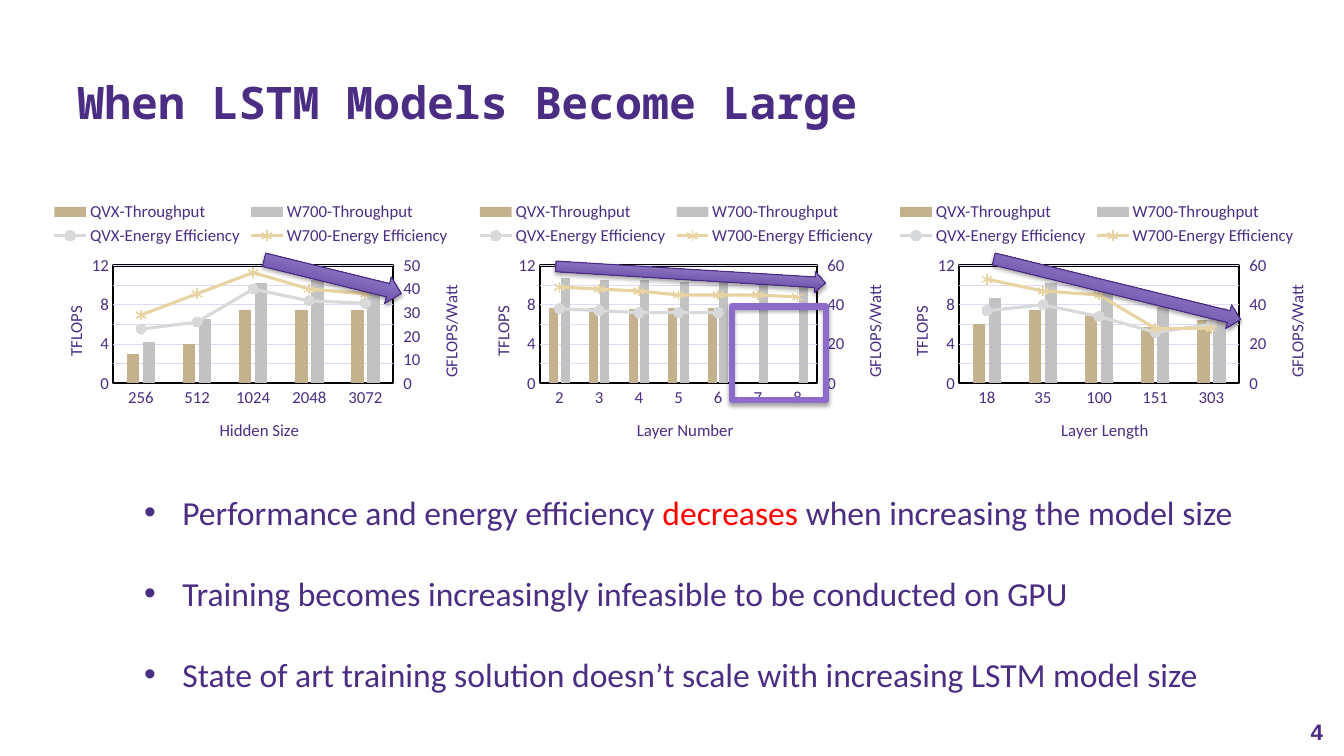
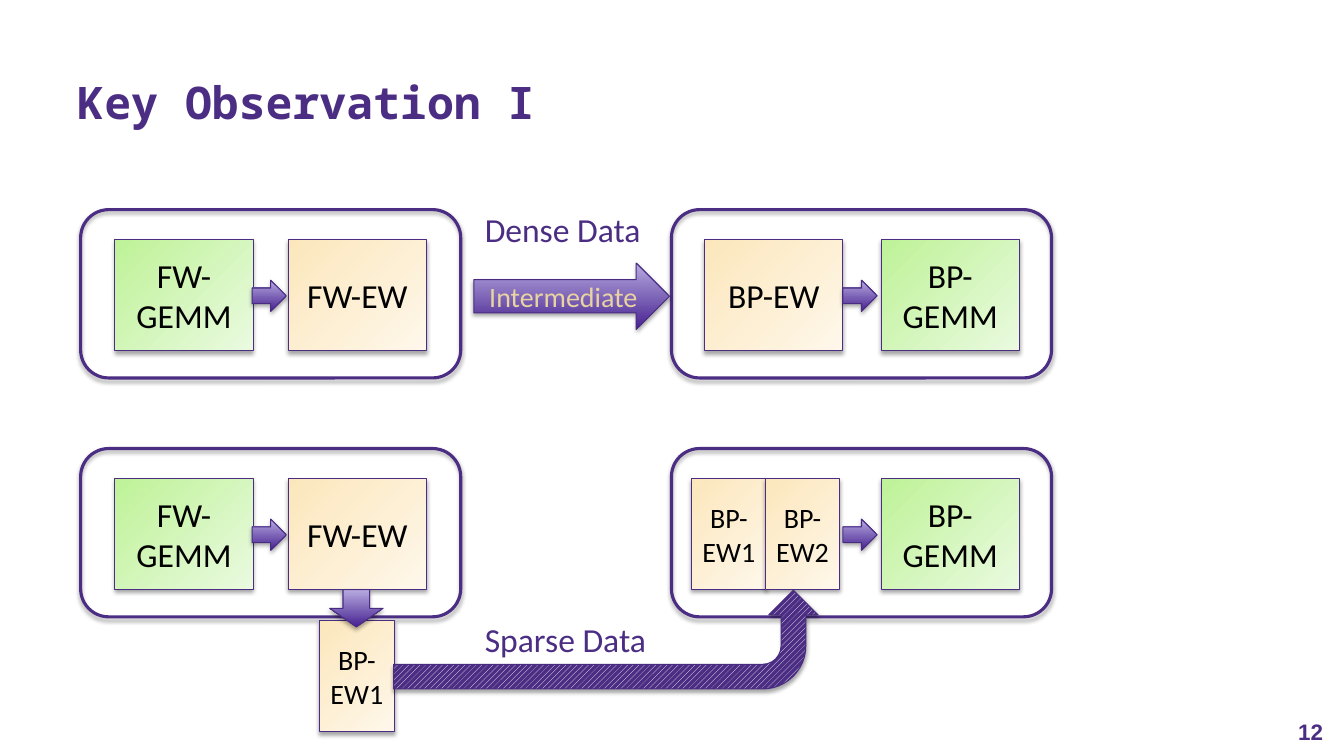
from copy import deepcopy

from lxml.etree import SubElement
from pptx import Presentation
from pptx.chart.axis import ValueAxis
from pptx.chart.data import CategoryChartData
from pptx.dml.color import RGBColor
from pptx.enum.chart import XL_CHART_TYPE as ChartType
from pptx.enum.chart import XL_LEGEND_POSITION as LegendPosition
from pptx.enum.chart import XL_MARKER_STYLE as Marker
from pptx.enum.chart import XL_TICK_MARK as Tick
from pptx.enum.dml import MSO_PATTERN as Pattern
from pptx.enum.shapes import MSO_SHAPE as Shape
from pptx.enum.text import MSO_ANCHOR as Anchor
from pptx.enum.text import PP_ALIGN as Align
from pptx.oxml import parse_xml
from pptx.oxml.ns import nsdecls, qn
from pptx.util import Inches, Pt

PURPLE, EDGE, LILAC, GOLD = "4B2E83", "492B82", "8C6BCB", "E8D3A2"
ARROW_FILL = ("472190", "B7ABE0", 90)
GREEN_FILL = ("BEF297", "EAFAE0", 315)
CREAM_FILL = ("FCE7BC", "FEF7EA", 315)
TITLE = {"name": "Noto Sans Mono", "size": 32, "bold": True, "color": PURPLE}
NUMBER = {"name": "Arial", "size": 16, "bold": True, "color": PURPLE}
BODY = {"name": "Calibri", "size": 24, "bold": False, "color": PURPLE}
CHART_TEXT = BODY | {"size": 12}
BARS = [("QVX-Throughput", "C3B28D"), ("W700-Throughput", "C2C2C2")]
LINES = [("QVX-Energy Efficiency", "D8D9DA", Marker.CIRCLE),
         ("W700-Energy Efficiency", GOLD, Marker.STAR)]
CHARTS = [
    {"box": (0.35, 1.89, 4.28, 2.66), "title": "Hidden Size", "title_x": 0.42, "right_max": 50,
     "categories": ["256", "512", "1024", "2048", "3072"],
     "values": [[3, 4, 7.5, 7.5, 7.5], [4.2, 6.6, 10.2, 10.5, 10.5],
                [23, 26, 40, 35, 34], [29, 38, 47, 40, 38]]},
    {"box": (4.59, 1.89, 4.24, 2.66), "title": "Layer Number", "title_x": 0.4, "right_max": 60,
     "categories": ["2", "3", "4", "5", "6", "7", "8"],
     "values": [[7.7, 7.7, 7.6, 7.7, 7.7, None, None],
                [10.7, 10.5, 10.5, 10.3, 10.3, 10.4, 10.4],
                [38, 37, 36, 36, 36, None, None], [49, 48, 47, 45, 45, 45, 44]]},
    {"box": (8.74, 1.89, 4.28, 2.66), "title": "Layer Length", "title_x": 0.41, "right_max": 60,
     "categories": ["18", "35", "100", "151", "303"],
     "values": [[6, 7.5, 7, 5.7, 6.5], [8.7, 10.2, 9.4, 7.8, 7.7],
                [37, 40, 34, 26, 30], [53, 47, 45, 28, 28]]},
]
TREND_ARROWS = [((2.6, 2.61, 1.4, 0.27), 13.8), ((5.51, 2.62, 2.68, 0.21), 3.5),
                ((9.82, 2.75, 2.52, 0.24), 13.8)]
BULLETS = [
    [("Performance and energy efficiency ", PURPLE), ("decreases ", "FF0000"),
     ("when increasing the model size", PURPLE)],
    [("Training becomes increasingly infeasible to be conducted on GPU", PURPLE)],
    [("State of art training solution doesn’t scale with increasing LSTM model size", PURPLE)],
]
FORWARD = [("FW-GEMM", 0.34, 1.37, GREEN_FILL), ("FW-EW", 2.06, 1.37, CREAM_FILL)]
BACKWARD = [("BP-EW", 0.33, 1.37, CREAM_FILL), ("BP-GEMM", 2.08, 1.37, GREEN_FILL)]
SPLIT_BACKWARD = [("BP-EW1", 0.2, 0.74, CREAM_FILL), ("BP-EW2", 0.93, 0.74, CREAM_FILL),
                  ("BP-GEMM", 2.08, 1.37, GREEN_FILL)]


def rgb(value):
    """Turn a hex string into a colour."""
    return RGBColor.from_string(value)


def style(font, values):
    """Apply a dict of format values to a font."""
    for key, value in values.items():
        if key == "color":
            font.color.rgb = rgb(value)
        else:
            setattr(font, key, Pt(value) if key == "size" else value)


def add_span(para, text, values):
    """Append one formatted run to a paragraph."""
    span = para.add_run()
    span.text = text
    style(span.font, values)


def add_text(page, box, text, values, align=Align.LEFT, anchor=Anchor.TOP, wrap=True):
    """Place a single-paragraph text box."""
    frame = page.shapes.add_textbox(*map(Inches, box)).text_frame
    frame.word_wrap, frame.vertical_anchor = wrap, anchor
    frame.paragraphs[0].alignment = align
    add_span(frame.paragraphs[0], text, values)


def set_line(line, color, width):
    """Give a line its colour and width."""
    line.color.rgb, line.width = rgb(color), Pt(width)


def add_block(page, kind, box, fill=None, line=(EDGE, 0.75), text="", values=BODY, turn=0):
    """Place a softly shadowed shape with an optional gradient and label."""
    shape = page.shapes.add_shape(kind, *map(Inches, box))
    shape.rotation = turn
    set_line(shape.line, *line)
    if fill:
        first, last, angle = fill
        shape.fill.gradient()
        shape.fill.gradient_angle = angle
        for stop, color in zip(shape.fill.gradient_stops, (first, last)):
            stop.color.rgb = rgb(color)
    else:
        shape.fill.background()
    shape.shadow.inherit = False
    effects = shape._element.spPr.find(qn("a:effectLst"))
    shadow = SubElement(effects, qn("a:outerShdw"), blurRad=str(Pt(3.1)), dist=str(Pt(1.8)),
                        dir="5400000", algn="t", rotWithShape="0")
    tint = SubElement(shadow, qn("a:srgbClr"), val="000000")
    SubElement(tint, qn("a:alpha"), val="35000")
    if text:
        shape.text_frame.word_wrap = True
        shape.text_frame.vertical_anchor = Anchor.MIDDLE
        para = shape.text_frame.paragraphs[0]
        para.alignment = Align.CENTER
        add_span(para, text, values)
    return shape


def new_page(deck, title, number):
    """Add a blank page with the shared title and page number."""
    page = deck.slides.add_slide(deck.slide_layouts[6])
    add_text(page, (0.67, 0.55, 11.93, 0.77), title, TITLE, anchor=Anchor.BOTTOM)
    add_text(page, (10.11, 7.08, 3.11, 0.52), number, NUMBER, align=Align.RIGHT)
    return page


def set_layout(parent, **places):
    """Fix the place of a chart part as fractions of the chart."""
    layout = parent.find(qn("c:layout"))
    if layout is None:
        layout = parse_xml(f"<c:layout {nsdecls('c')}/>")
        parent.insert(0, layout)
    manual = SubElement(layout, qn("c:manualLayout"))
    if "w" in places:
        SubElement(manual, qn("c:layoutTarget"), val="inner")
    for mode in ("xMode", "yMode"):
        SubElement(manual, qn(f"c:{mode}"), val="edge")
    for key, value in places.items():
        SubElement(manual, qn(f"c:{key}"), val=str(value))


def name_axis(axis, text, x, y, upright=False):
    """Title an axis at a fixed place."""
    title = axis.axis_title
    add_span(title.text_frame.paragraphs[0], text, CHART_TEXT)
    body = title.text_frame._txBody.bodyPr
    body.set("rot", "-5400000" if upright else "0")
    body.set("vert", "horz")
    set_layout(title._element, x=x, y=y)


def add_right_axis(chart, top):
    """Move the last two series to lines on a second axis and return that axis."""
    bars = chart.plots[0]._element
    left, bottom = chart.value_axis._element, chart.category_axis._element
    lines = parse_xml(f'<c:lineChart {nsdecls("c")}><c:grouping val="standard"/>'
                      '<c:varyColors val="0"/></c:lineChart>')
    for series in bars.findall(qn("c:ser"))[len(BARS):]:
        for flag in series.findall(qn("c:invertIfNegative")):
            series.remove(flag)
        lines.append(series)
    for tag, value in (("marker", "1"), ("axId", "5001"), ("axId", "5002")):
        SubElement(lines, qn(f"c:{tag}"), val=value)
    bars.addnext(lines)
    right, hidden = deepcopy(left), deepcopy(bottom)
    left.addnext(right)
    right.addnext(hidden)
    changes = [(right, {"axId": "5002", "crossAx": "5001", "axPos": "r", "crosses": "max"}),
               (hidden, {"axId": "5001", "crossAx": "5002", "delete": "1"})]
    for element, values in changes:
        for tag, value in values.items():
            element.find(qn(f"c:{tag}")).set("val", value)
    axis = ValueAxis(right)
    axis.has_major_gridlines = False
    axis.maximum_scale, axis.major_unit = top, 10
    axis.major_tick_mark = Tick.OUTSIDE
    return axis


def add_throughput_chart(page, box, title, title_x, right_max, categories, values):
    """Place a chart of throughput bars and energy efficiency lines."""
    data = CategoryChartData()
    data.categories = categories
    for (name, *_), numbers in zip(BARS + LINES, values):
        data.add_series(name, numbers)
    chart = page.shapes.add_chart(ChartType.COLUMN_CLUSTERED, *map(Inches, box), data).chart
    style(chart.font, CHART_TEXT)
    chart.has_title, chart.has_legend = False, True
    chart.legend.position = LegendPosition.TOP
    chart.legend.include_in_layout = False
    style(chart.legend.font, CHART_TEXT)
    columns, bottom, left = chart.plots[0], chart.category_axis, chart.value_axis
    columns.gap_width, columns.overlap, columns.vary_by_categories = 219, -27, False
    for axis in (bottom, left):
        axis.major_tick_mark = Tick.NONE
        style(axis.tick_labels.font, CHART_TEXT)
    set_line(bottom.format.line, "000000", 1.5)
    left.minimum_scale, left.maximum_scale, left.major_unit = 0, 12, 2
    left.format.line.fill.background()
    set_line(left.major_gridlines.format.line, "E2DAF2", 0.75)
    right = add_right_axis(chart, right_max)
    name_axis(bottom, title, title_x, 0.84)
    name_axis(left, "TFLOPS", 0.06, 0.42, True)
    name_axis(right, "GFLOPS/Watt", 0.93, 0.34, True)
    for series, (_, color) in zip(chart.plots[0].series, BARS):
        series.format.fill.solid()
        series.format.fill.fore_color.rgb = rgb(color)
    for series, (_, color, marker) in zip(chart.plots[1].series, LINES):
        series.smooth = False
        set_line(series.format.line, color, 2.25)
        series.marker.style, series.marker.size = marker, 7
        series.marker.format.fill.solid()
        series.marker.format.fill.fore_color.rgb = rgb(color)
        set_line(series.marker.format.line, color, 0.75)
    area = columns._element.getparent()
    set_layout(area, x=0.18, y=0.28, w=0.65, h=0.44)
    area.append(parse_xml(f'<c:spPr {nsdecls("c", "a")}><a:noFill/><a:ln w="{Pt(1.5)}"><a:solidFill>'
                          '<a:srgbClr val="000000"/></a:solidFill></a:ln></c:spPr>'))


def add_bullets(page, box):
    """Place the bulleted findings."""
    frame = page.shapes.add_textbox(*map(Inches, box)).text_frame
    frame.word_wrap = True
    for index, spans in enumerate(BULLETS):
        para = frame.add_paragraph() if index else frame.paragraphs[0]
        properties = para._p.get_or_add_pPr()
        properties.set("marL", str(Inches(0.38)))
        properties.set("indent", str(Inches(-0.38)))
        SubElement(properties, qn("a:buFont"), typeface="Arial")
        SubElement(properties, qn("a:buChar"), char="•")
        if index:
            para.space_before = Pt(29)
        for text, color in spans:
            add_span(para, text, BODY | {"color": color})


def add_operation(page, box, text, fill):
    """Place one operation block, with smaller text when it is narrow."""
    size = 24 if box[2] > 1 else 20
    add_block(page, Shape.RECTANGLE, box, fill, (PURPLE, 0.75), text,
              BODY | {"size": size, "color": "000000"})


def add_stage(page, left, top, operations):
    """Place a rounded frame with its operations and the arrow between them."""
    for text, offset, width, fill in operations:
        add_operation(page, (left + offset, top + 0.3, width, 1.1), text, fill)
    add_block(page, Shape.RIGHT_ARROW, (left + 1.7, top + 0.7, 0.34, 0.31), ARROW_FILL)
    add_block(page, Shape.ROUNDED_RECTANGLE, (left, top, 3.77, 1.67), line=(PURPLE, 2.25))


def add_sparse_path(page, left, top):
    """Place the early operation and the bent arrow that carries sparse data."""
    add_operation(page, (left, top, 0.74, 1.1), "BP-EW1", CREAM_FILL)
    add_block(page, Shape.DOWN_ARROW, (left + 0.1, top - 0.31, 0.53, 0.37), ARROW_FILL)
    bend = add_block(page, Shape.BENT_ARROW, (left + 2.35, top - 1.92, 0.98, 4.21), turn=90)
    bend._element.spPr.find(qn("a:xfrm")).set("flipH", "1")
    bend.fill.patterned()
    bend.fill.pattern = Pattern.WIDE_UPWARD_DIAGONAL
    bend.fill.fore_color.rgb, bend.fill.back_color.rgb = rgb("FFFFFF"), rgb(PURPLE)
    add_text(page, (left + 1.54, top - 0.07, 1.82, 0.5), "Sparse Data", BODY, wrap=False)


def build_models_page(deck):
    """Build the page on large models."""
    page = new_page(deck, "When LSTM Models Become Large", "4")
    for chart in CHARTS:
        add_throughput_chart(page, **chart)
    for box, turn in TREND_ARROWS:
        add_block(page, Shape.RIGHT_ARROW, box, ARROW_FILL, turn=turn)
    add_bullets(page, (1.33, 4.83, 11.11, 2.12))
    add_block(page, Shape.RECTANGLE, (7.26, 3.04, 0.93, 0.93), line=(LILAC, 4.5))


def build_observation_page(deck):
    """Build the page that compares dense and sparse data flow."""
    page = new_page(deck, "Key Observation I", "12")
    for top, backward in ((2.08, BACKWARD), (4.45, SPLIT_BACKWARD)):
        add_stage(page, 0.8, top, FORWARD)
        add_stage(page, 6.66, top, backward)
    add_block(page, Shape.RIGHT_ARROW, (4.7, 2.61, 1.94, 0.66), ARROW_FILL,
              text="Intermediate", values=BODY | {"size": 20, "color": GOLD})
    add_text(page, (4.71, 2.02, 1.76, 0.5), "Dense Data", BODY, wrap=False)
    add_sparse_path(page, 3.17, 6.16)


def main():
    """Build and save the deck."""
    deck = Presentation()
    deck.slide_width, deck.slide_height = Inches(13.33), Inches(7.5)
    build_models_page(deck)
    build_observation_page(deck)
    deck.save("out.pptx")


if __name__ == "__main__":
    main()
